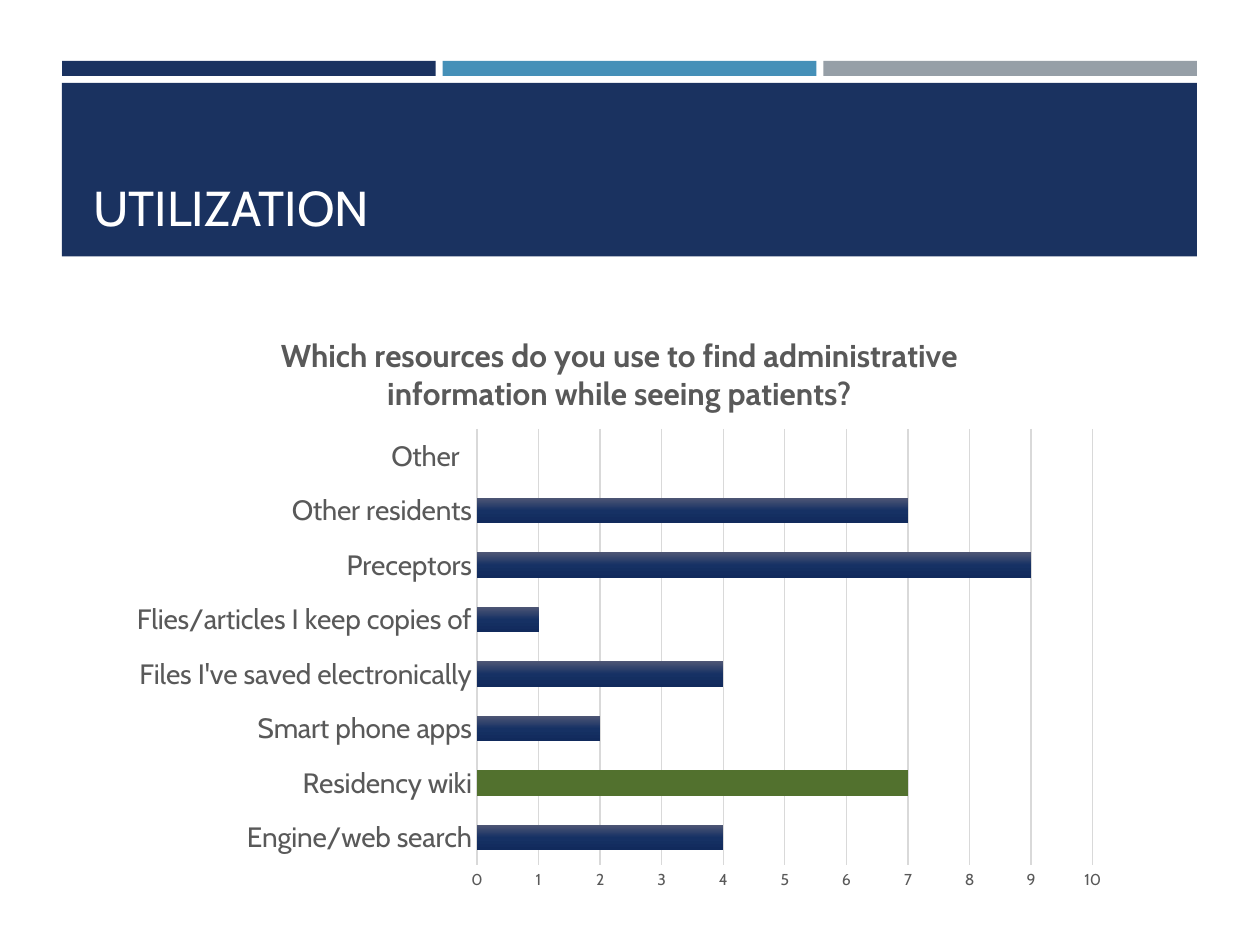
import pptx
import pptx.chart.data
import pptx.dml.color
import pptx.enum.chart
import pptx.enum.text
import pptx.oxml
import pptx.oxml.ns
import pptx.util
from pptx.util import Cm, Pt

NAVY, BLUE, SILVER = "1A3260", "4590B8", "969FA7"
WHITE, GREY, GRID, GREEN = "FFFFFF", "595959", "D9D9D9", "52712E"
BAR_GRADIENT = [(0, "4E5675"), (50, "163164"), (100, "112A5C")]

ANSWERS = [
    ("Engine/web search", 4),
    ("Residency wiki", 7),
    ("Smart phone apps", 2),
    ("Files I've saved electronically", 4),
    ("Flies/articles I keep copies of", 1),
    ("Preceptors", 9),
    ("Other residents", 7),
    ("Other  ", 0),
]
HIGHLIGHTED = 1


def color(hex_string):
    return pptx.dml.color.RGBColor.from_string(hex_string)


def place_in_chart(parent, index, **fractions):
    """Set a manual layout, in fractions of the chart area, as child number index."""
    for layout in parent.findall(pptx.oxml.ns.qn("c:layout")):
        parent.remove(layout)
    target = '<c:layoutTarget val="inner"/>' if "w" in fractions else ""
    modes = "".join(f'<c:{key}Mode val="edge"/>' for key in "xy")
    values = "".join(f'<c:{key} val="{value}"/>' for key, value in fractions.items())
    parent.insert(index, pptx.oxml.parse_xml(
        f'<c:layout {pptx.oxml.ns.nsdecls("c")}><c:manualLayout>'
        f"{target}{modes}{values}</c:manualLayout></c:layout>"))


def fill_gradient(chart_format, stops):
    """Fill from top to bottom with any number of (percent, colour) stops."""
    chart_format.fill.gradient()
    chart_format.fill.gradient_angle = 270
    stop_list = chart_format._element.spPr.find(
        f'{pptx.oxml.ns.qn("a:gradFill")}/{pptx.oxml.ns.qn("a:gsLst")}')
    for stop in list(stop_list):
        stop_list.remove(stop)
    for percent, hex_string in stops:
        stop_list.append(pptx.oxml.parse_xml(
            f'<a:gs {pptx.oxml.ns.nsdecls("a")} pos="{percent * 1000}">'
            f'<a:srgbClr val="{hex_string}"/></a:gs>'))


class SlideBuilder:
    """Holds the style and the current slide."""

    font_name = "Cabin"

    def __init__(self, slide):
        self.slide = slide

    def style_font(self, font, size, hex_string, bold=False):
        font.name = self.font_name
        font.size = Pt(size)
        font.bold = bold
        font.color.rgb = color(hex_string)

    def rectangle(self, left, top, width, height, hex_string):
        shape = self.slide.shapes.add_shape(
            pptx.enum.shapes.MSO_SHAPE.RECTANGLE, Cm(left), Cm(top), Cm(width), Cm(height))
        shape.shadow.inherit = False
        shape.fill.solid()
        shape.fill.fore_color.rgb = color(hex_string)
        shape.line.fill.background()

    def title(self, text, left, top, width, height):
        shape = self.slide.shapes.title
        shape.left, shape.top, shape.width, shape.height = map(Cm, (left, top, width, height))
        text_frame = shape.text_frame
        text_frame.text = text
        text_frame.vertical_anchor = pptx.enum.text.MSO_ANCHOR.BOTTOM
        paragraph = text_frame.paragraphs[0]
        paragraph.alignment = pptx.enum.text.PP_ALIGN.LEFT
        self.style_font(paragraph.runs[0].font, 28, WHITE)
        # Bring the title in front of the header band
        self.slide.shapes._spTree.append(shape._element)

    def bar_chart(self, title, answers, highlighted, left, top, width, height):
        data = pptx.chart.data.CategoryChartData()
        data.categories = [label for label, _ in answers]
        data.add_series("Series 1", [count for _, count in answers])
        chart = self.slide.shapes.add_chart(
            pptx.enum.chart.XL_CHART_TYPE.BAR_CLUSTERED,
            Cm(left), Cm(top), Cm(width), Cm(height), data).chart
        self.style_font(chart.font, 10, "000000")
        chart.has_legend = False

        chart.has_title = True
        chart.chart_title.include_in_layout = False
        text_frame = chart.chart_title.text_frame
        text_frame.text = title
        self.style_font(text_frame.paragraphs[0].runs[0].font, 18, GREY, bold=True)
        place_in_chart(chart.chart_title._element, 1, x=0.16, y=0.04)
        place_in_chart(chart._chartSpace.chart.plotArea, 0, x=0.36, y=0.21, w=0.61, h=0.73)

        plot = chart.plots[0]
        plot.gap_width = 115
        plot.overlap = -20
        plot.vary_by_categories = False
        series = plot.series[0]
        fill_gradient(series.format, BAR_GRADIENT)
        point_fill = series.points[highlighted].format.fill
        point_fill.solid()
        point_fill.fore_color.rgb = color(GREEN)

        for axis, size in ((chart.category_axis, 16), (chart.value_axis, 9)):
            axis.major_tick_mark = pptx.enum.chart.XL_TICK_MARK.NONE
            axis.minor_tick_mark = pptx.enum.chart.XL_TICK_MARK.NONE
            self.style_font(axis.tick_labels.font, size, GREY)
        chart.category_axis.format.line.color.rgb = color(GRID)
        chart.category_axis.format.line.width = Pt(1)
        value_axis = chart.value_axis
        value_axis.minimum_scale, value_axis.maximum_scale, value_axis.major_unit = 0, 10, 1
        value_axis.format.line.fill.background()
        value_axis.has_major_gridlines = True
        value_axis.major_gridlines.format.line.color.rgb = color(GRID)
        value_axis.major_gridlines.format.line.width = Pt(0.75)


def main():
    presentation = pptx.Presentation()
    presentation.slide_width, presentation.slide_height = Cm(25.4), Cm(19.05)
    builder = SlideBuilder(presentation.slides.add_slide(presentation.slide_layouts[5]))

    header_left, header_width, gap = 1.25, 22.88, 0.14
    stripes = (NAVY, BLUE, SILVER)
    stripe_width = (header_width - gap * (len(stripes) - 1)) / len(stripes)
    for index, hex_string in enumerate(stripes):
        builder.rectangle(header_left + index * (stripe_width + gap), 1.23,
                          stripe_width, 0.3, hex_string)
    builder.rectangle(header_left, 1.67, header_width, 3.5, NAVY)
    builder.title("UTILIZATION", 1.63, 1.9, 22.2, 3)
    builder.bar_chart(
        "Which resources do you use to find administrative information while seeing patients?",
        ANSWERS, HIGHLIGHTED, 2.29, 6.12, 20.35, 12.04)
    presentation.save("out.pptx")


if __name__ == "__main__":
    main()
